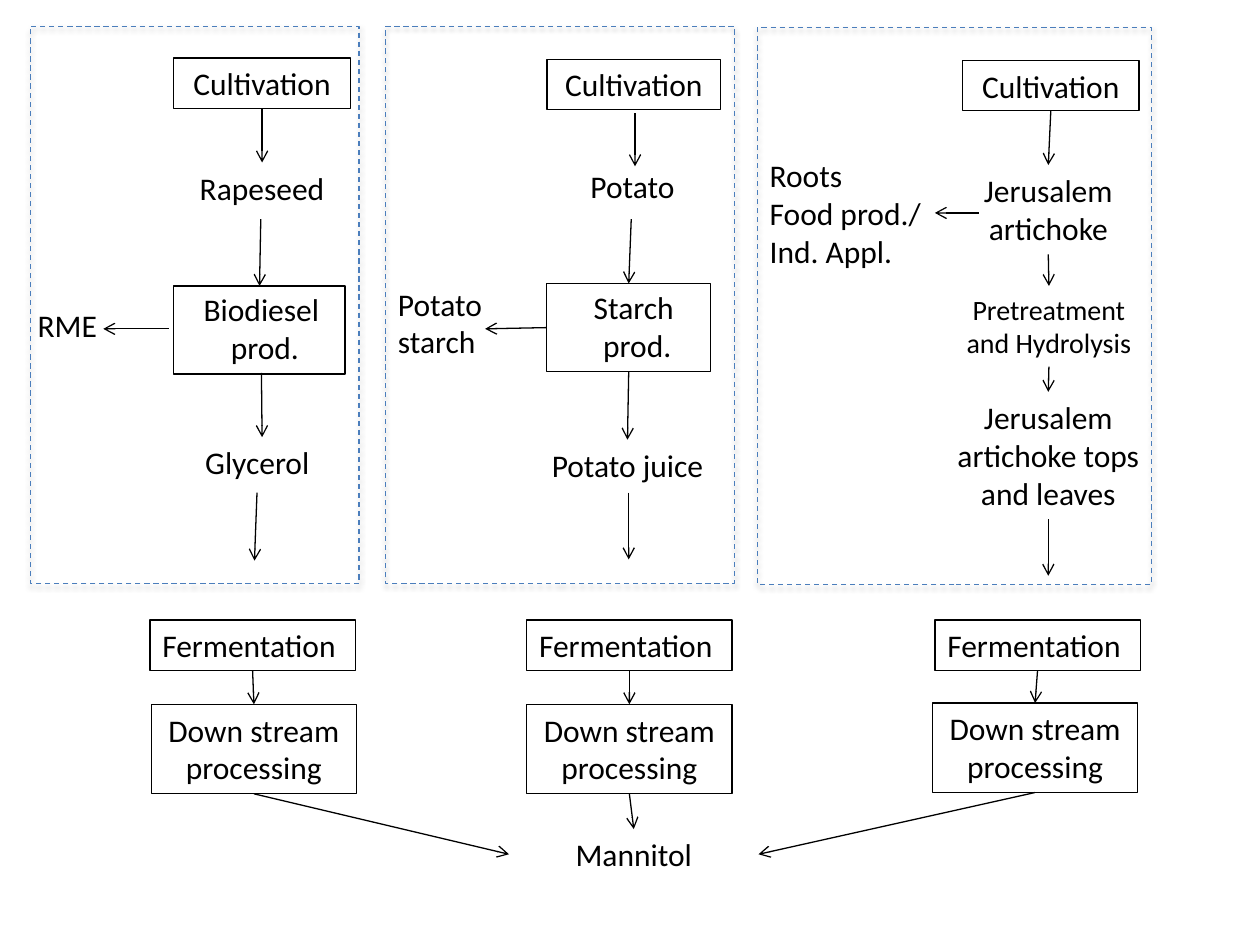
import pptx
import pptx.util
import pptx.dml.color
import pptx.enum.dml
import pptx.enum.shapes
import pptx.enum.text
import pptx.oxml
import pptx.oxml.ns
import lxml.etree

Inches = pptx.util.Inches
Pt = pptx.util.Pt
color = pptx.dml.color.RGBColor.from_string
CENTER = pptx.enum.text.PP_ALIGN.CENTER
LEFT = pptx.enum.text.PP_ALIGN.LEFT

deck = pptx.Presentation()
deck.slide_width = Inches(10)
deck.slide_height = Inches(7.5)
page = deck.slides.add_slide(deck.slide_layouts[6])


def add_box(left, top, width, height, text="", outline=None, align=CENTER, size=18):
    place = [Inches(value) for value in (left, top, width, height)]
    if outline:
        box = page.shapes.add_shape(pptx.enum.shapes.MSO_SHAPE.RECTANGLE, *place)
        box.shadow.inherit = False
        box.fill.background()
        box.line.color.rgb = color(outline)
        box.line.width = Pt(0.75)
    else:
        box = page.shapes.add_textbox(*place)
    if text:
        box.text_frame.word_wrap = True
        box.text_frame.vertical_anchor = pptx.enum.text.MSO_ANCHOR.TOP
        box.text_frame.text = text
        for para in box.text_frame.paragraphs:
            para.alignment = align
            para.font.name = "Calibri"
            para.font.size = Pt(size)
            para.font.color.rgb = color("000000")
    return box


def add_arrow(start, end):
    points = [(0, 0) if isinstance(tip[0], str) else tip for tip in (start, end)]
    arrow = page.shapes.add_connector(
        pptx.enum.shapes.MSO_CONNECTOR.STRAIGHT,
        *[Inches(value) for point in points for value in point])
    if isinstance(start[0], str):
        arrow.begin_connect(boxes[start[0]], start[1])
    if isinstance(end[0], str):
        arrow.end_connect(boxes[end[0]], end[1])
    arrow.line.color.rgb = color("000000")
    arrow.line.width = Pt(0.75)
    tip = lxml.etree.SubElement(arrow.line._get_or_add_ln(), pptx.oxml.ns.qn("a:tailEnd"))
    tip.set("type", "arrow")
    lxml.etree.SubElement(arrow._element.spPr, pptx.oxml.ns.qn("a:effectLst"))


for left, top, width in [(0.24, 0.21, 2.61), (3.06, 0.21, 2.77), (6.01, 0.22, 3.13)]:
    frame = add_box(left, top, width, 4.42, outline="4B7EBC")
    frame.line.dash_style = pptx.enum.dml.MSO_LINE.DASH
    effects = frame._element.spPr.find(pptx.oxml.ns.qn("a:effectLst"))
    effects.append(pptx.oxml.parse_xml(
        '<a:outerShdw xmlns:a="http://schemas.openxmlformats.org/drawingml/2006/main" '
        'blurRad="39370" dist="22860" dir="5400000" rotWithShape="0">'
        '<a:srgbClr val="000000"><a:alpha val="35000"/></a:srgbClr></a:outerShdw>'))

boxes = {
    "biodiesel": add_box(1.38, 2.27, 1.36, 0.7, outline="000000"),
    "biodiesel label": add_box(1.41, 2.25, 1.33, 0.71, "Biodiesel\n prod."),
    "rme": add_box(0.2, 2.38, 0.96, 0.4, "RME", align=LEFT),
    "rapeseed": add_box(1.38, 1.29, 1.4, 0.4, "Rapeseed"),
    "glycerol": add_box(1.53, 3.47, 1.28, 0.4, "Glycerol", align=LEFT),
    "starch": add_box(4.34, 2.25, 1.3, 0.7, outline="000000"),
    "starch label": add_box(4.43, 2.24, 1.2, 0.71, "Starch\n prod."),
    "potato": add_box(4.32, 1.28, 1.4, 0.4, "Potato"),
    "potato starch": add_box(3.06, 2.21, 0.96, 0.71, "Potato starch", align=LEFT),
    "juice": add_box(4.14, 3.49, 1.68, 0.4, "Potato juice"),
    "artichoke": add_box(7.64, 1.31, 1.36, 0.71, "Jerusalem artichoke"),
    "roots": add_box(6.01, 1.19, 1.41, 1.01, "Roots\nFood prod./ Ind. Appl.", align=LEFT),
    "pretreatment": add_box(7.51, 2.27, 1.63, 0.64, "Pretreatment and Hydrolysis", size=16),
    "tops": add_box(7.48, 3.11, 1.68, 1.01, "Jerusalem artichoke tops and leaves"),
    "mannitol": add_box(4.04, 6.58, 1.98, 0.4, "Mannitol"),
}

columns = [
    ((1.38, 0.46, 1.4), 1.19, (1.2, 5.59), 1),
    ((4.34, 0.47, 1.38), 4.18, (4.18, 5.59), 0),
    ((7.64, 0.48, 1.4), 7.42, (7.4, 5.58), 3),
]
for number, (cultivation, ferment_left, downstream, mannitol_side) in enumerate(columns, 1):
    boxes[f"cultivation {number}"] = add_box(*cultivation, 0.4, "Cultivation", "000000")
    boxes[f"fermentation {number}"] = add_box(
        ferment_left, 4.92, 1.63, 0.4, "Fermentation", "000000", LEFT)
    boxes[f"downstream {number}"] = add_box(
        *downstream, 1.63, 0.71, "Down stream processing", "000000")
    add_arrow((f"fermentation {number}", 2), (f"downstream {number}", 0))
    add_arrow((f"downstream {number}", 2), ("mannitol", mannitol_side))

boxes["downstream 3"].fill.solid()
boxes["downstream 3"].fill.fore_color.rgb = color("FFFFFF")

arrows = [
    (("cultivation 1", 2), ("rapeseed", 0)),
    ((2.07, 1.74), ("biodiesel", 0)),
    ((1.34, 2.61), (0.82, 2.61)),
    (("biodiesel label", 2), (2.08, 3.47)),
    ((2.04, 3.91), (2.02, 4.45)),
    ((5.04, 0.9), (5.04, 1.32)),
    ((5.01, 1.74), ("starch", 0)),
    (("starch", 1), (3.85, 2.61)),
    (("starch", 2), ("juice", 0)),
    ((4.99, 3.91), (4.99, 4.44)),
    (("cultivation 3", 2), ("artichoke", 0)),
    ((7.77, 1.69), (7.42, 1.69)),
    (("artichoke", 2), ("pretreatment", 0)),
    (("pretreatment", 2), ("tops", 0)),
    (("tops", 2), (8.32, 4.57)),
]
for start, end in arrows:
    add_arrow(start, end)

deck.save("out.pptx")
